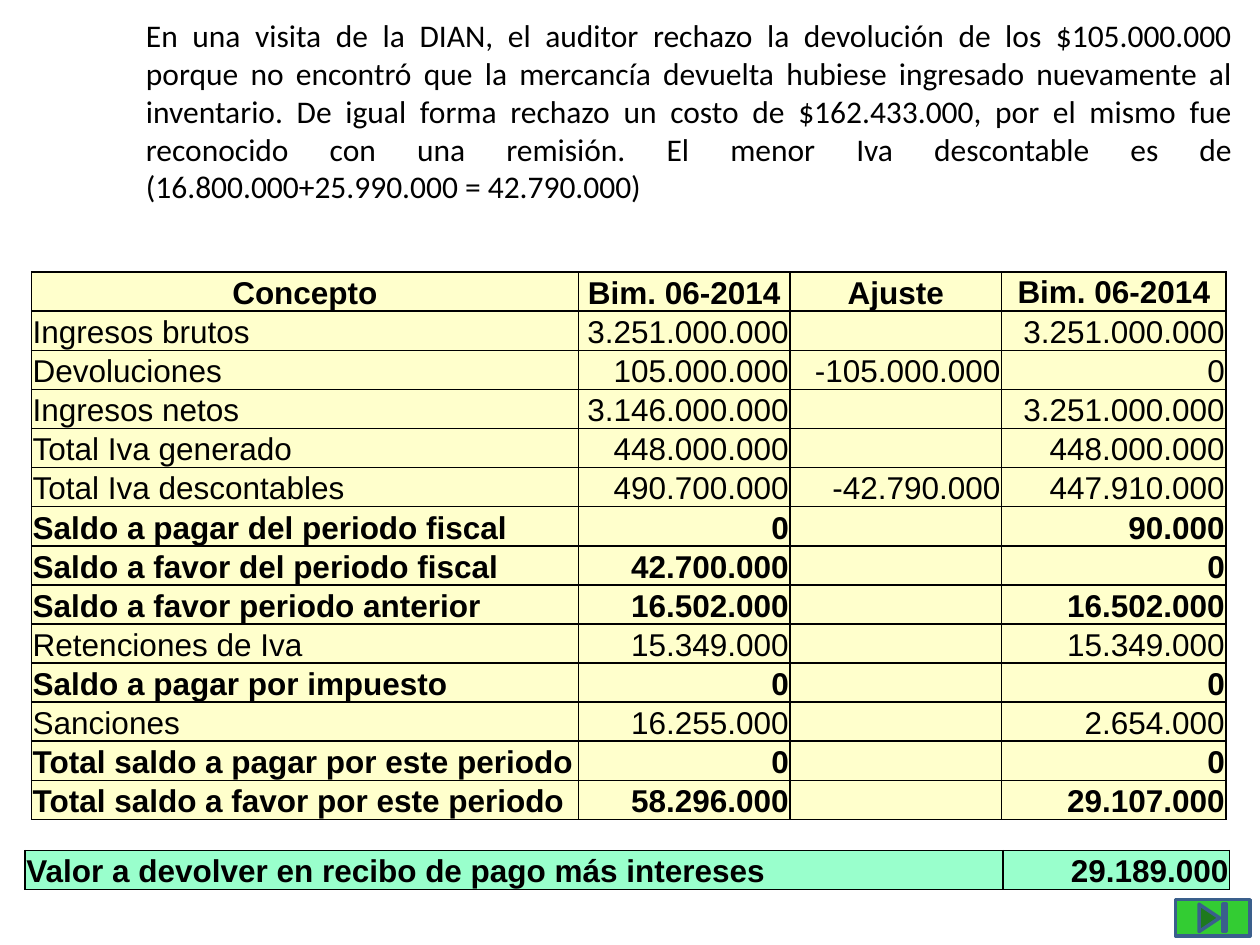
"""Build the slide on the tax audit adjustments to the sixth bimester of 2014."""
from lxml import etree
from pptx import Presentation
from pptx.dml.color import RGBColor
from pptx.enum.shapes import MSO_SHAPE
from pptx.enum.text import MSO_ANCHOR, MSO_AUTO_SIZE, PP_ALIGN
from pptx.oxml.ns import qn
from pptx.util import Inches, Pt

LEFT, CENTER, RIGHT, JUSTIFY = PP_ALIGN.LEFT, PP_ALIGN.CENTER, PP_ALIGN.RIGHT, PP_ALIGN.JUSTIFY
BOTTOM, MIDDLE = MSO_ANCHOR.BOTTOM, MSO_ANCHOR.MIDDLE
FIT_SHAPE = MSO_AUTO_SIZE.SHAPE_TO_FIT_TEXT
END_BUTTON = MSO_SHAPE.ACTION_BUTTON_END

BLACK = RGBColor(0x00, 0x00, 0x00)
CREAM = RGBColor(0xFF, 0xFF, 0xCC)
MINT = RGBColor(0x99, 0xFF, 0xCC)
GREEN = RGBColor(0x33, 0xCC, 0x33)
BLUE = RGBColor(0x3A, 0x5F, 0x8C)

ROW_HEIGHT = 0.31
HEADINGS = ("Concepto", "Bim. 06-2014", "Ajuste", "Bim. 06-2014")
ENTRIES = [
    ("Ingresos brutos", "3.251.000.000", "", "3.251.000.000", False),
    ("Devoluciones", "105.000.000", "-105.000.000", "0", False),
    ("Ingresos netos", "3.146.000.000", "", "3.251.000.000", False),
    ("Total Iva generado", "448.000.000", "", "448.000.000", False),
    ("Total Iva descontables", "490.700.000", "-42.790.000", "447.910.000", False),
    ("Saldo a pagar del periodo fiscal", "0", "", "90.000", True),
    ("Saldo a favor del periodo fiscal", "42.700.000", "", "0", True),
    ("Saldo a favor periodo anterior", "16.502.000", "", "16.502.000", True),
    ("Retenciones de Iva", "15.349.000", "", "15.349.000", False),
    ("Saldo a pagar por impuesto", "0", "", "0", True),
    ("Sanciones", "16.255.000", "", "2.654.000", False),
    ("Total saldo a pagar por este periodo", "0", "", "0", True),
    ("Total saldo a favor por este periodo", "58.296.000", "", "29.107.000", True),
]


def style_cell(cell, text, align, bold, fill):
    cell.margin_left = cell.margin_right = cell.margin_top = Inches(0.01)
    cell.margin_bottom = 0
    cell.vertical_anchor = BOTTOM
    properties = cell._tc.get_or_add_tcPr()
    for side in ("a:lnL", "a:lnR", "a:lnT", "a:lnB"):
        border = etree.SubElement(properties, qn(side), w=str(Pt(1)))
        solid = etree.SubElement(border, qn("a:solidFill"))
        etree.SubElement(solid, qn("a:srgbClr"), val=str(BLACK))
    cell.fill.solid()
    cell.fill.fore_color.rgb = fill
    cell.text = text
    paragraph = cell.text_frame.paragraphs[0]
    paragraph.alignment = align
    font = paragraph.font
    font.name, font.size, font.bold = "Arial", Pt(18), bold
    font.color.rgb = BLACK


def add_grid(left, top, widths, rows, fill):
    table = slide.shapes.add_table(
        len(rows), len(widths), Inches(left), Inches(top),
        Inches(sum(widths)), Inches(ROW_HEIGHT * len(rows))).table
    table.first_row = table.horz_banding = False
    for column, width in zip(table.columns, widths):
        column.width = Inches(width)
    for r, (texts, aligns, bold) in enumerate(rows):
        table.rows[r].height = Inches(ROW_HEIGHT)
        for c, (text, align) in enumerate(zip(texts, aligns)):
            style_cell(table.cell(r, c), text, align, bold, fill)
    return table


prs = Presentation()
prs.slide_width, prs.slide_height = Inches(10), Inches(7.5)
slide = prs.slides.add_slide(prs.slide_layouts[6])

finding = slide.shapes.add_textbox(Inches(1.06), Inches(0.08), Inches(8.82), Inches(1.62)).text_frame
finding.word_wrap = True
finding.auto_size = FIT_SHAPE
finding.text = (
    "En una visita de la DIAN, el auditor rechazo la devolución de los $105.000.000 "
    "porque no encontró que la mercancía devuelta hubiese ingresado nuevamente al "
    "inventario. De igual forma rechazo un costo de $162.433.000, por el mismo fue "
    "reconocido con una remisión. El menor Iva descontable es de "
    "(16.800.000+25.990.000 = 42.790.000)")
finding_text = finding.paragraphs[0]
finding_text.alignment = JUSTIFY
finding_text.font.name, finding_text.font.size = "Calibri", Pt(18)
finding_text.font.color.rgb = BLACK

declared = [(HEADINGS[:2], (CENTER, CENTER), True)]
adjusted = [(HEADINGS[2:], (CENTER, CENTER), True)]
for concept, reported, adjustment, corrected, bold in ENTRIES:
    declared.append(((concept, reported), (LEFT, RIGHT), bold))
    adjusted.append(((adjustment, corrected), (RIGHT, RIGHT), bold))
add_grid(0.25, 2.16, (4.34, 1.68), declared, CREAM)
adjustments = add_grid(6.27, 2.16, (1.68, 1.78), adjusted, CREAM)
adjustments.cell(0, 1).vertical_anchor = MIDDLE

end_button = slide.shapes.add_shape(END_BUTTON, Inches(9.33), Inches(7.14), Inches(0.59), Inches(0.29))
end_button.shadow.inherit = False
end_button.fill.solid()
end_button.fill.fore_color.rgb = GREEN
end_button.line.color.rgb = BLUE
end_button.line.width = Pt(2)

refund = [(("Valor a devolver en recibo de pago más intereses", "29.189.000"), (LEFT, RIGHT), True)]
add_grid(0.2, 6.75, (7.76, 1.8), refund, MINT)

prs.save("out.pptx")
